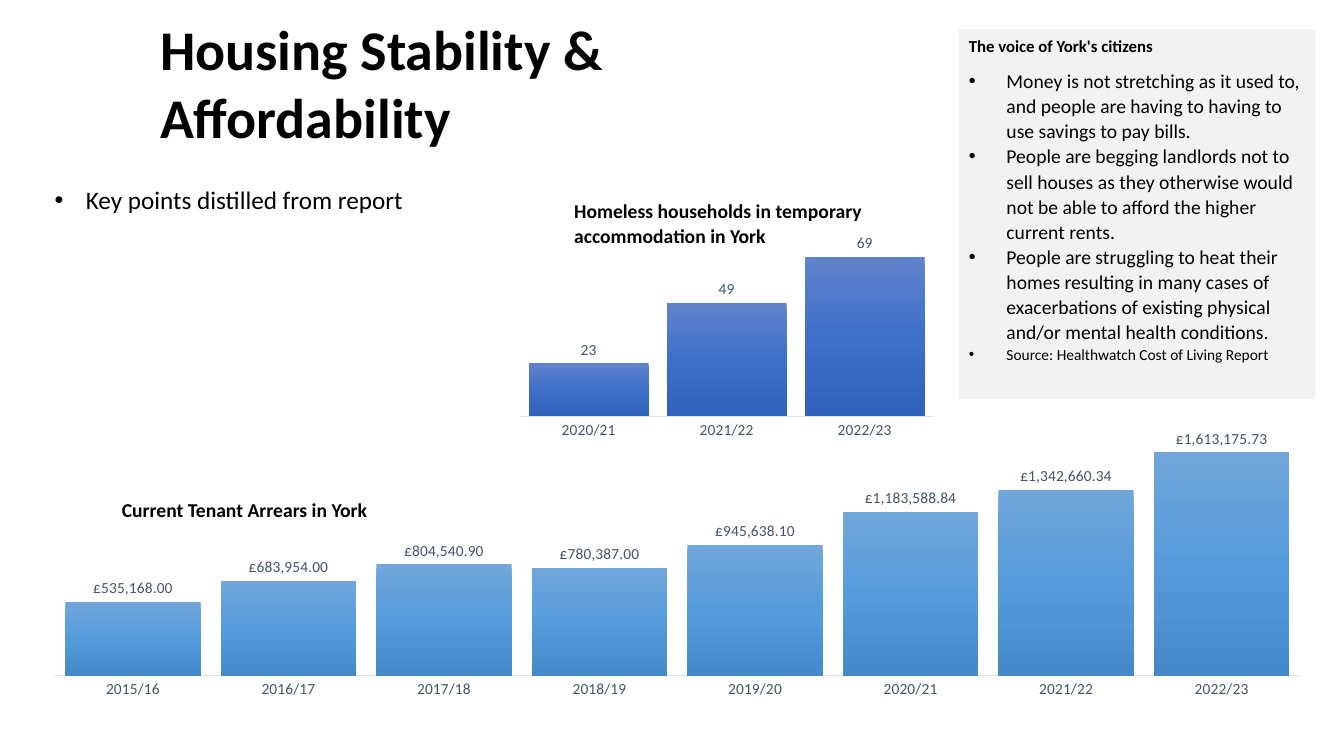
from dataclasses import dataclass

from lxml import etree
from pptx import Presentation
from pptx.chart.data import CategoryChartData
from pptx.dml.color import RGBColor
from pptx.enum.chart import XL_CHART_TYPE, XL_LABEL_POSITION, XL_TICK_MARK
from pptx.enum.text import MSO_ANCHOR, MSO_AUTO_SIZE, PP_ALIGN
from pptx.oxml import parse_xml
from pptx.oxml.ns import nsdecls, qn
from pptx.slide import Slide
from pptx.text.text import TextFrame
from pptx.util import Cm, Pt

COLUMNS = XL_CHART_TYPE.COLUMN_CLUSTERED
OUTSIDE_END = XL_LABEL_POSITION.OUTSIDE_END
NO_TICKS = XL_TICK_MARK.NONE
TOP = MSO_ANCHOR.TOP
NO_AUTOFIT = MSO_AUTO_SIZE.NONE
LEFT = PP_ALIGN.LEFT


@dataclass(frozen=True)
class Theme:
    font: str = "Calibri"
    text: str = "000000"
    panel: str = "F2F2F2"
    chart_text: str = "44546A"
    axis_line: str = "E0E5EB"
    arrears_bars: tuple[str, ...] = ("71A6DB", "559BDB", "448ACA")
    homeless_bars: tuple[str, ...] = ("6183CB", "3E70CA", "3062BB")
    title_size: float = 40
    key_point_size: float = 18
    body_size: float = 14
    panel_heading_size: float = 12
    small_size: float = 11


THEME = Theme()


@dataclass(frozen=True)
class Box:
    """Position and size in centimetres."""
    left: float
    top: float
    width: float
    height: float

    def lengths(self) -> tuple[Cm, Cm, Cm, Cm]:
        return Cm(self.left), Cm(self.top), Cm(self.width), Cm(self.height)


@dataclass(frozen=True)
class ColumnChart:
    box: Box
    plot: Box  # fractions of the chart area
    years: tuple[str, ...]
    amounts: tuple[float, ...]
    axis_max: float
    number_format: str
    bar_colours: tuple[str, ...]
    heading: str
    heading_box: Box


YEARS = tuple(f"{year}/{year % 100 + 1}" for year in range(2015, 2023))

CHARTS = (
    ColumnChart(
        Box(0.74, 10.36, 32.66, 7.67), Box(0.02, 0.05, 0.96, 0.82), YEARS,
        (535168, 683954, 804540.9, 780387, 945638.1,
         1183588.84, 1342660.34, 1613175.73),
        1800000, '"£"#,##0.00', THEME.arrears_bars,
        "Current Tenant Arrears in York", Box(2.82, 12.37, 9.73, 2.41)),
    ColumnChart(
        Box(12.88, 5.72, 10.87, 5.49), Box(0.02, 0.02, 0.96, 0.85), YEARS[-3:],
        (23, 49, 69), 80, "0", THEME.homeless_bars,
        "Homeless households in temporary accommodation in York",
        Box(14.22, 4.85, 9.04, 2.41)),
)

CITIZEN_VOICES = (
    "Money is not stretching as it used to, and people are having to having to "
    "use savings to pay bills.",
    "People are begging landlords not to sell houses as they otherwise would "
    "not be able to afford the higher current rents.",
    "People are struggling to heat their homes resulting in many cases of "
    "exacerbations of existing physical and/or mental health conditions.",
)


def rgb(colour: str) -> RGBColor:
    return RGBColor.from_string(colour)


def add_line(frame: TextFrame, text: str, *, size: float, bold: bool = False,
             bullet_indent: float = 0, spacing: float = 1, after: float = 0) -> None:
    """Add one paragraph; a bullet_indent in centimetres gives it a bullet."""
    paragraph = frame.add_paragraph() if frame.text else frame.paragraphs[0]
    properties = paragraph._p.get_or_add_pPr()
    properties.set("marL", str(Cm(bullet_indent)))
    properties.set("indent", str(-Cm(bullet_indent)))
    if bullet_indent:
        etree.SubElement(properties, qn("a:buFont"), typeface="Arial")
        etree.SubElement(properties, qn("a:buChar"), char="•")
    else:
        etree.SubElement(properties, qn("a:buNone"))
    paragraph.alignment = LEFT
    paragraph.line_spacing = spacing
    paragraph.space_before = Pt(0)
    paragraph.space_after = Pt(after)
    run = paragraph.add_run()
    run.text = text
    run.font.name = THEME.font
    run.font.size = Pt(size)
    run.font.bold = bold
    run.font.color.rgb = rgb(THEME.text)


def prepare_frame(shape, box: Box) -> TextFrame:
    """Place a text shape and return its frame, wrapped and top-aligned."""
    shape.left, shape.top, shape.width, shape.height = box.lengths()
    frame = shape.text_frame
    frame.word_wrap = True
    frame.auto_size = NO_AUTOFIT
    frame.vertical_anchor = TOP
    return frame


def set_plot_layout(chart, plot: Box) -> None:
    plot_area = chart._chartSpace.chart.plotArea
    for layout in plot_area.findall(qn("c:layout")):
        plot_area.remove(layout)
    plot_area.insert(0, parse_xml(
        f'<c:layout {nsdecls("c")}><c:manualLayout><c:layoutTarget val="inner"/>'
        '<c:xMode val="edge"/><c:yMode val="edge"/>'
        f'<c:x val="{plot.left}"/><c:y val="{plot.top}"/>'
        f'<c:w val="{plot.width}"/><c:h val="{plot.height}"/>'
        '</c:manualLayout></c:layout>'))


def fill_bars(series, colours: tuple[str, ...]) -> None:
    """Give the bars an even gradient from top to bottom."""
    step = 100000 // (len(colours) - 1)
    stops = "".join(f'<a:gs pos="{i * step}"><a:srgbClr val="{colour}"/></a:gs>'
                    for i, colour in enumerate(colours))
    series._element.get_or_add_spPr().insert(0, parse_xml(
        f'<a:gradFill {nsdecls("a")}><a:gsLst>{stops}</a:gsLst>'
        '<a:lin ang="5400000" scaled="0"/></a:gradFill>'))


def add_column_chart(slide: Slide, column_chart: ColumnChart) -> None:
    chart_data = CategoryChartData(number_format=column_chart.number_format)
    chart_data.categories = column_chart.years
    chart_data.add_series("Series 1", column_chart.amounts)
    chart = slide.shapes.add_chart(COLUMNS, *column_chart.box.lengths(), chart_data).chart
    chart.has_legend = False
    chart.has_title = False
    chart.font.name = THEME.font
    chart.font.size = Pt(THEME.small_size)
    chart.font.color.rgb = rgb(THEME.chart_text)
    set_plot_layout(chart, column_chart.plot)

    year_axis, amount_axis = chart.category_axis, chart.value_axis
    year_axis.major_tick_mark = NO_TICKS
    year_axis.format.line.color.rgb = rgb(THEME.axis_line)
    year_axis.format.line.width = Pt(0.75)
    amount_axis.minimum_scale = 0
    amount_axis.maximum_scale = column_chart.axis_max
    amount_axis.has_major_gridlines = False
    amount_axis.visible = False

    bars = chart.plots[0]
    bars.gap_width = 15
    bars.overlap = -24
    bars.vary_by_categories = False
    bars.has_data_labels = True
    labels = bars.data_labels
    labels.show_value = True
    labels.position = OUTSIDE_END
    labels.number_format = column_chart.number_format
    labels.number_format_is_linked = False
    fill_bars(bars.series[0], column_chart.bar_colours)


def add_chart_heading(slide: Slide, column_chart: ColumnChart) -> None:
    box = column_chart.heading_box
    frame = prepare_frame(slide.shapes.add_textbox(*box.lengths()), box)
    add_line(frame, column_chart.heading, size=THEME.body_size, bold=True,
             spacing=1.07, after=8)


def fill_voices_panel(panel) -> None:
    panel.fill.solid()
    panel.fill.fore_color.rgb = rgb(THEME.panel)
    frame = prepare_frame(panel, Box(24.16, 0.74, 8.99, 9.32))
    add_line(frame, "The voice of York's citizens", size=THEME.panel_heading_size,
             bold=True, spacing=1.07, after=8)
    for voice in CITIZEN_VOICES:
        add_line(frame, voice, size=THEME.body_size, bullet_indent=0.95, spacing=1.07)
    add_line(frame, "Source: Healthwatch Cost of Living Report",
             size=THEME.small_size, bullet_indent=0.95, spacing=1.07, after=8)


def main() -> None:
    deck = Presentation()
    deck.slide_width, deck.slide_height = Cm(33.87), Cm(19.05)
    slide = deck.slides.add_slide(deck.slide_layouts.get_by_name("Two Content"))
    title, voices_panel, key_points = slide.placeholders

    add_line(prepare_frame(title, Box(3.78, 0.25, 16.94, 4.27)),
             "Housing Stability & Affordability", size=THEME.title_size, bold=True)
    fill_voices_panel(voices_panel)
    add_line(prepare_frame(key_points, Box(1.12, 4.52, 10.87, 1.02)),
             "Key points distilled from report",
             size=THEME.key_point_size, bullet_indent=0.79)
    for column_chart in CHARTS:
        add_column_chart(slide, column_chart)
    for column_chart in CHARTS:
        add_chart_heading(slide, column_chart)
    deck.save("out.pptx")


if __name__ == "__main__":
    main()
